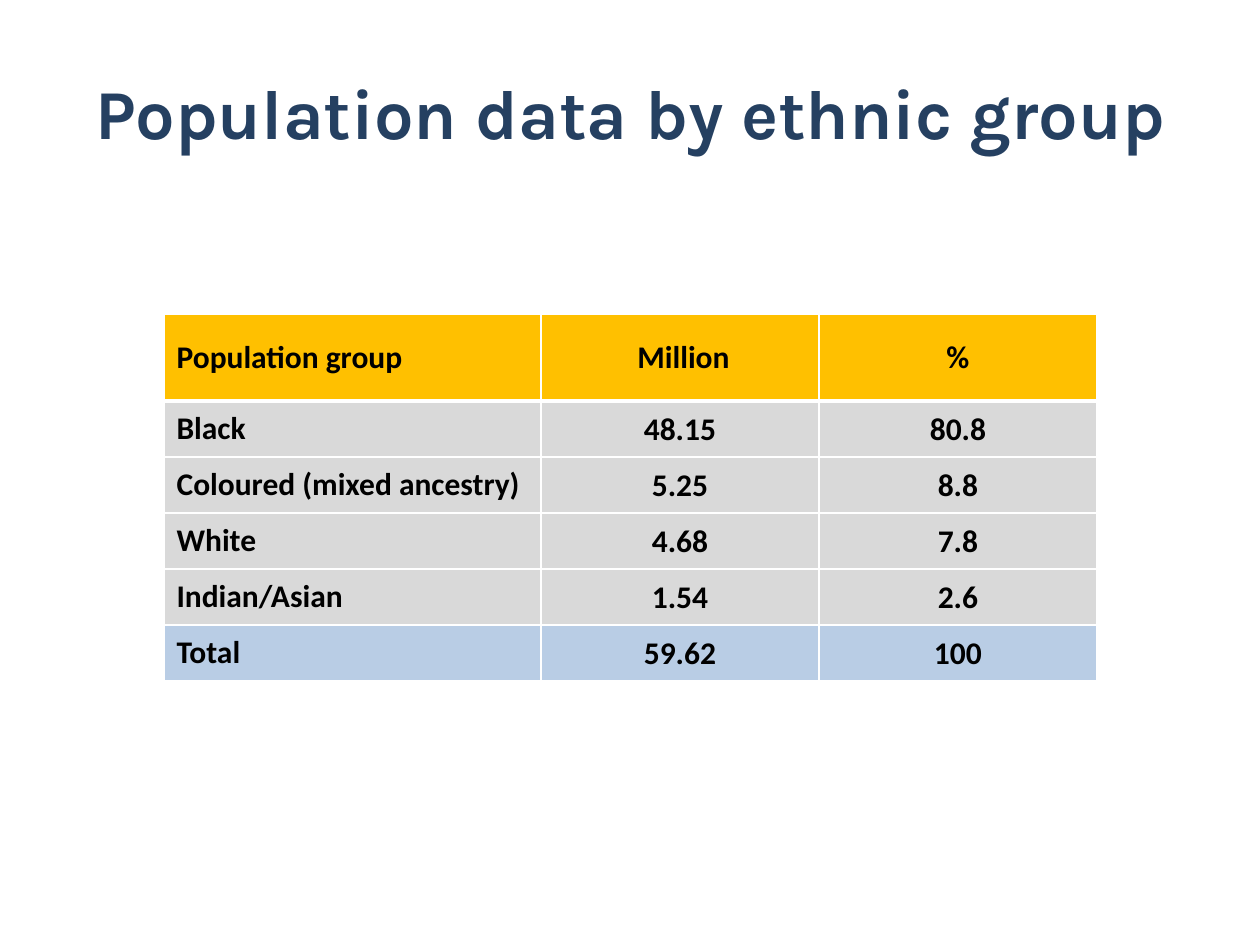
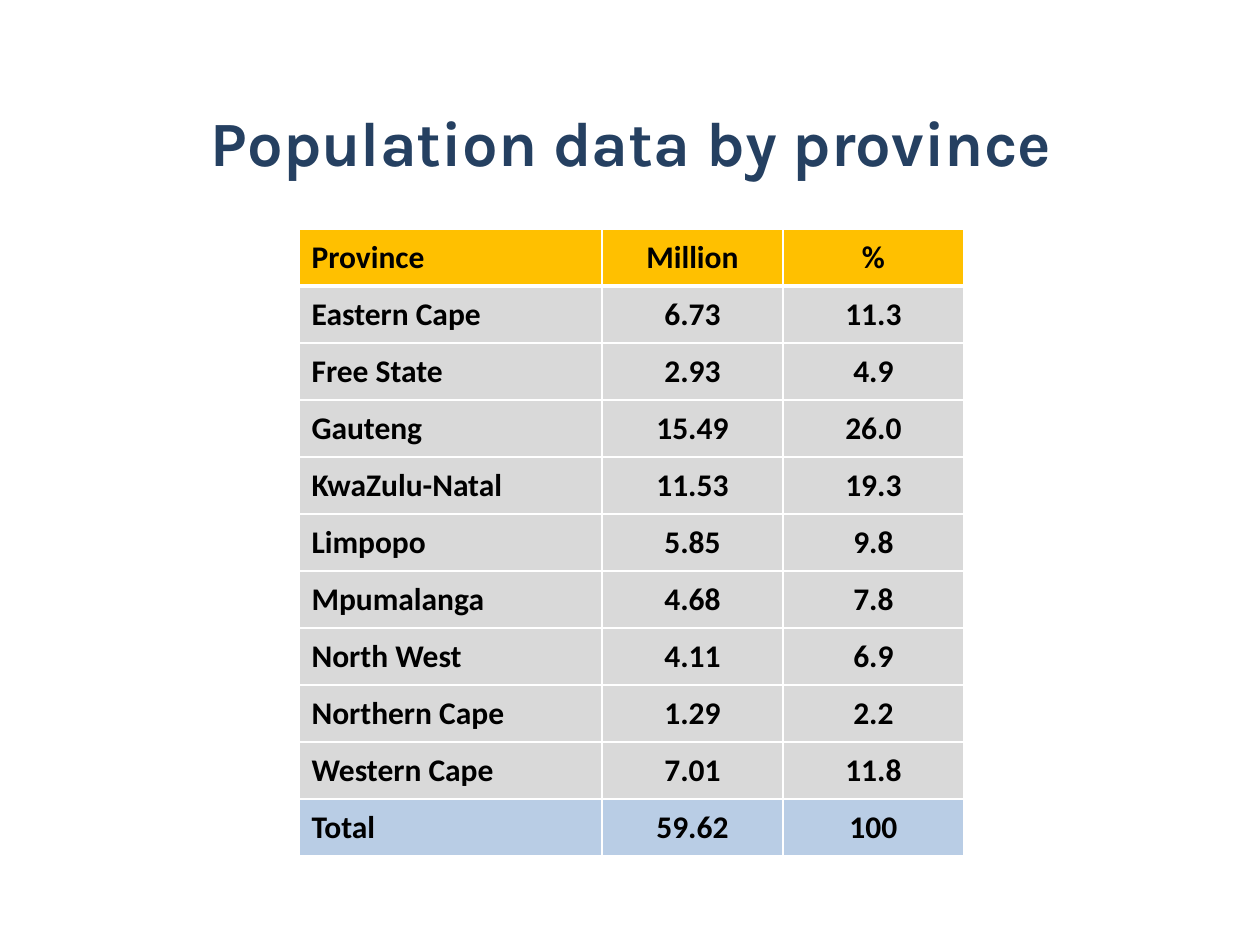
from dataclasses import dataclass

import lxml.etree
import pptx
import pptx.dml.color
import pptx.enum.text
import pptx.oxml.ns
import pptx.util

EMU_PER_PX = 914400 / 126
TITLE_FONT, TABLE_FONT = "Karla", "Calibri"
NAVY, BLACK, WHITE = "254061", "000000", "FFFFFF"
AMBER, GREY, BLUE = "FFC000", "D9D9D9", "B9CDE5"
TABLE_SIZE = 18
THIN, THICK = 1, 3
CENTER = pptx.enum.text.PP_ALIGN.CENTER
LEFT = pptx.enum.text.PP_ALIGN.LEFT
MIDDLE = pptx.enum.text.MSO_ANCHOR.MIDDLE


@dataclass
class Title:
    text: str
    box: tuple[int, int, int, int]
    size: int


@dataclass
class DataTable:
    left: int
    top: int
    label_width: int
    value_width: int
    header_height: int
    row_height: int
    rows: list[tuple[str, str, str]]


@dataclass
class PopulationSlide:
    title: Title
    table: DataTable


SLIDES = [
    PopulationSlide(
        Title("Population data by ethnic group", (15, 48, 1230, 128), 40),
        DataTable(164, 314, 377, 278, 87, 56, [
            ("Population group", " Million", "%"),
            ("Black", "48.15", "80.8"),
            ("Coloured (mixed ancestry)", "5.25", "8.8"),
            ("White", "4.68", "7.8"),
            ("Indian/Asian", "1.54", "2.6"),
            ("Total", "59.62", "100"),
        ]),
    ),
    PopulationSlide(
        Title("Population data by province", (64, 86, 1134, 110), 36),
        DataTable(299, 229, 303, 181, 57, 57, [
            ("Province", "Million", "%"),
            ("Eastern Cape", "6.73", "11.3"),
            ("Free State", "2.93", "4.9"),
            ("Gauteng", "15.49", "26.0"),
            ("KwaZulu-Natal", "11.53", "19.3"),
            ("Limpopo", "5.85", "9.8"),
            ("Mpumalanga", "4.68", "7.8"),
            ("North West", "4.11", "6.9"),
            ("Northern Cape", "1.29", "2.2"),
            ("Western Cape", "7.01", "11.8"),
            ("Total", "59.62", "100"),
        ]),
    ),
]


def px(value: int) -> int:
    return round(value * EMU_PER_PX)


def rgb(value: str) -> pptx.dml.color.RGBColor:
    return pptx.dml.color.RGBColor.from_string(value)


def write(tf, text: str, font: str, size: int, color: str, align) -> None:
    p = tf.paragraphs[0]
    p.text = text
    p.alignment = align
    r = p.runs[0]
    r.font.name = font
    r.font.size = pptx.util.Pt(size)
    r.font.bold = True
    r.font.color.rgb = rgb(color)


def add_title(s, title: Title) -> None:
    sp = s.shapes.add_textbox(*map(px, title.box))
    tf = sp.text_frame
    tf.word_wrap = True
    tf.vertical_anchor = MIDDLE
    write(tf, title.text, TITLE_FONT, title.size, NAVY, CENTER)


def add_borders(cell, top: int, bottom: int) -> None:
    qn = pptx.oxml.ns.qn
    tc_pr = cell._tc.get_or_add_tcPr()
    for side, width in (("L", THIN), ("R", THIN), ("T", top), ("B", bottom)):
        ln = lxml.etree.SubElement(tc_pr, qn(f"a:ln{side}"), w=str(pptx.util.Pt(width)))
        fill = lxml.etree.SubElement(ln, qn("a:solidFill"))
        lxml.etree.SubElement(fill, qn("a:srgbClr"), val=WHITE)


def add_data_table(s, data: DataTable) -> None:
    widths = [data.label_width, data.value_width, data.value_width]
    last = len(data.rows) - 1
    heights = [data.header_height] + [data.row_height] * last
    frame = s.shapes.add_table(len(heights), len(widths), px(data.left), px(data.top),
                               px(sum(widths)), px(sum(heights)))
    table = frame.table
    table.horz_banding = False
    for column, width in zip(table.columns, widths):
        column.width = px(width)
    for i, (row, height, values) in enumerate(zip(table.rows, heights, data.rows)):
        row.height = px(height)
        color = {0: AMBER, last: BLUE}.get(i, GREY)
        for j, (cell, text) in enumerate(zip(row.cells, values)):
            add_borders(cell, THICK if i == 1 else THIN, THICK if i == 0 else THIN)
            cell.fill.solid()
            cell.fill.fore_color.rgb = rgb(color)
            cell.vertical_anchor = MIDDLE
            if i and j:
                cell.margin_left = cell.margin_top = cell.margin_right = px(1)
                cell.margin_bottom = 0
            write(cell.text_frame, text, TABLE_FONT, TABLE_SIZE, BLACK, CENTER if j else LEFT)


def main() -> None:
    prs = pptx.Presentation()
    prs.slide_width, prs.slide_height = px(1260), px(945)
    for page in SLIDES:
        s = prs.slides.add_slide(prs.slide_layouts[6])
        add_title(s, page.title)
        add_data_table(s, page.table)
    prs.save("out.pptx")


if __name__ == "__main__":
    main()
